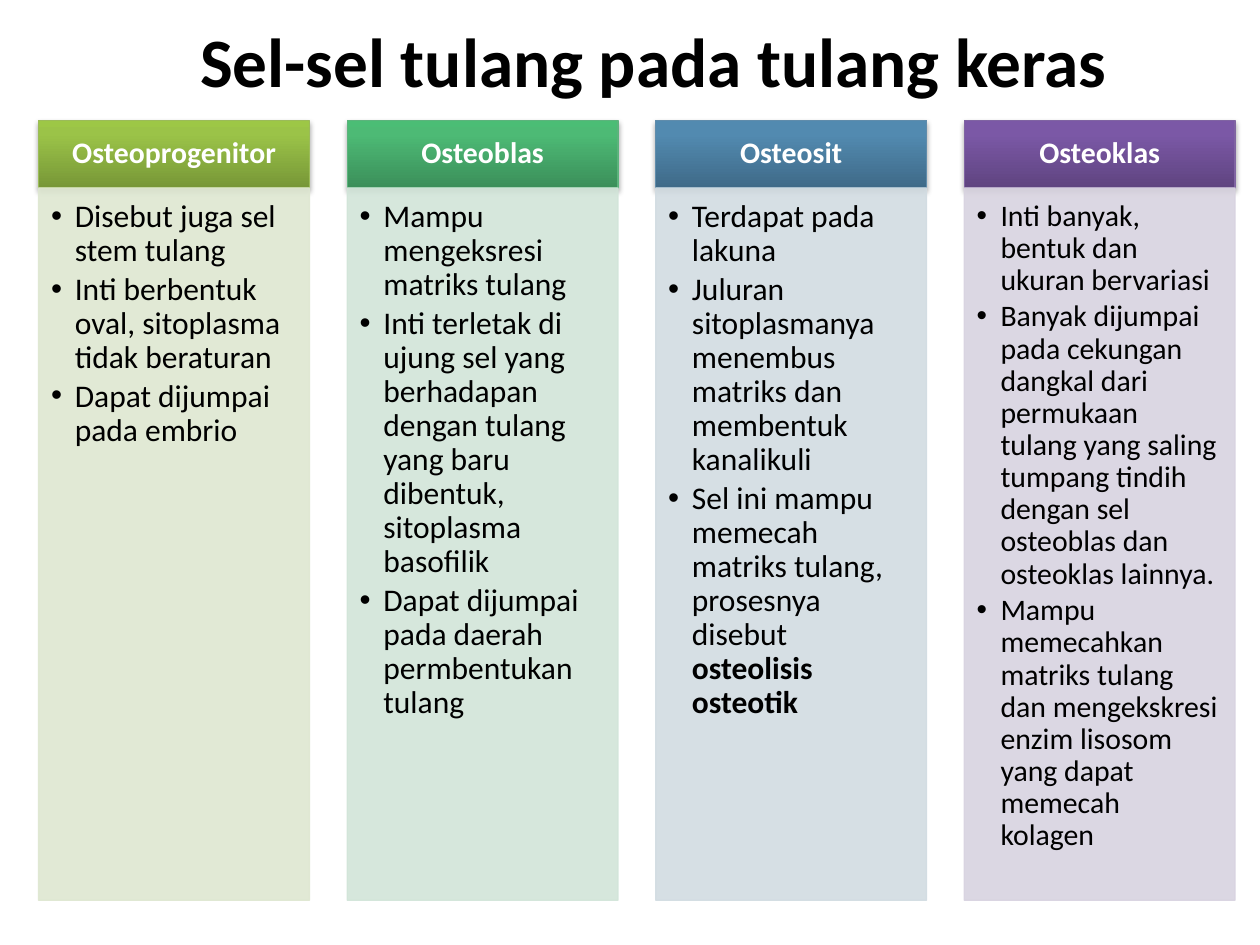
from copy import deepcopy

from lxml.etree import SubElement
from pptx import Presentation
from pptx.dml.color import RGBColor
from pptx.enum.shapes import MSO_SHAPE
from pptx.enum.text import MSO_ANCHOR, PP_ALIGN
from pptx.oxml.ns import qn
from pptx.util import Cm, Pt

COLORS = {
    "text": "000000",
    "header_text": "FFFFFF",
    "shadow": "000000",
    "green": {"stops": ("779737", "9BC348", "9DC746"), "line": "9BBB59", "body": "DEE7D1"},
    "teal": {"stops": ("3B8F5A", "4DBA75", "4BBD75"), "line": "5CB37C", "body": "D2E5D9"},
    "blue": {"stops": ("3F6A88", "528AB0", "518BB3"), "line": "608CAB", "body": "D2DCE2"},
    "purple": {"stops": ("5F4480", "7B58A6", "7C57A8"), "line": "8064A2", "body": "D8D3E0"},
}
STOP_POSITIONS = (0, 0.8, 1)
COLUMN_LEFT, COLUMN_STEP, COLUMN_WIDTH = 0.78, 6.22, 5.46
HEADER_TOP, HEADER_HEIGHT, BODY_HEIGHT = 2.43, 1.36, 14.36

TITLE_FRAME = {"word_wrap": True, "vertical_anchor": MSO_ANCHOR.MIDDLE}
HEADER_FRAME = {
    "word_wrap": True, "vertical_anchor": MSO_ANCHOR.MIDDLE,
    "margin_left": Cm(0.33), "margin_right": Cm(0.33),
    "margin_top": Cm(0.2), "margin_bottom": Cm(0.2),
}
BODY_FRAME = {
    "word_wrap": True, "vertical_anchor": MSO_ANCHOR.TOP,
    "margin_left": Cm(0.25), "margin_right": Cm(0.34),
    "margin_top": Cm(0.25), "margin_bottom": Cm(0.4),
}

COLUMNS = [
    ("Osteoprogenitor", "green", 18, [
        ["Disebut juga sel stem tulang"],
        ["Inti berbentuk oval, sitoplasma tidak beraturan"],
        ["Dapat dijumpai pada embrio"],
    ]),
    ("Osteoblas", "teal", 18, [
        ["Mampu mengeksresi matriks tulang"],
        ["Inti terletak di ujung sel yang berhadapan dengan tulang yang baru dibentuk, "
         "sitoplasma basofilik"],
        ["Dapat dijumpai pada daerah permbentukan tulang"],
    ]),
    ("Osteosit", "blue", 18, [
        ["Terdapat pada lakuna"],
        ["Juluran sitoplasmanya menembus matriks dan membentuk kanalikuli"],
        ["Sel ini mampu memecah matriks tulang, prosesnya disebut ", "osteolisis osteotik"],
    ]),
    ("Osteoklas", "purple", 17, [
        ["Inti banyak, bentuk dan ukuran bervariasi"],
        ["Banyak dijumpai pada cekungan dangkal dari permukaan tulang yang saling tumpang "
         "tindih dengan sel osteoblas dan osteoklas lainnya."],
        ["Mampu memecahkan matriks tulang dan mengekskresi enzim lisosom yang dapat "
         "memecah kolagen"],
    ]),
]


def apply_format(target, values):
    for name, value in values.items():
        setattr(target, name, value)


def add_run(paragraph, text, size, color, bold):
    run = paragraph.add_run()
    run.text = text
    apply_format(run.font, {"name": "Calibri", "size": Pt(size), "bold": bold})
    run.font.color.rgb = RGBColor.from_string(color)


presentation = Presentation()
apply_format(presentation, {"slide_width": Cm(25.4), "slide_height": Cm(19.05)})
slide = presentation.slides.add_slide(presentation.slide_layouts[6])

title = slide.shapes.add_textbox(Cm(2.87), Cm(0), Cm(20.62), Cm(2.41))
apply_format(title.text_frame, TITLE_FRAME)
paragraph = title.text_frame.paragraphs[0]
paragraph.alignment = PP_ALIGN.CENTER
add_run(paragraph, "Sel-sel tulang pada tulang keras", 39.6, COLORS["text"], True)

for index, (heading, palette_name, size, points) in enumerate(COLUMNS):
    palette = COLORS[palette_name]
    left = Cm(COLUMN_LEFT + index * COLUMN_STEP)

    header = slide.shapes.add_shape(
        MSO_SHAPE.RECTANGLE, left, Cm(HEADER_TOP), Cm(COLUMN_WIDTH), Cm(HEADER_HEIGHT))
    header.fill.gradient()
    header.fill.gradient_angle = 90
    stop_list = next(header.element.iter(qn("a:gsLst")))
    stop_list.append(deepcopy(stop_list[0]))
    for stop, position, color in zip(header.fill.gradient_stops, STOP_POSITIONS, palette["stops"]):
        stop.position = position
        stop.color.rgb = RGBColor.from_string(color)
    header.line.width = Pt(0.75)
    header.line.color.rgb = RGBColor.from_string(palette["line"])
    header.shadow.inherit = False
    effects = next(header.element.iter(qn("a:effectLst")))
    shadow = SubElement(effects, qn("a:outerShdw"), blurRad=str(Pt(3.1)), dist=str(Pt(1.8)),
                        dir="5400000", rotWithShape="0")
    shadow_color = SubElement(shadow, qn("a:srgbClr"), val=COLORS["shadow"])
    SubElement(shadow_color, qn("a:alpha"), val="35000")
    apply_format(header.text_frame, HEADER_FRAME)
    paragraph = header.text_frame.paragraphs[0]
    apply_format(paragraph, {"alignment": PP_ALIGN.CENTER, "line_spacing": 0.9})
    add_run(paragraph, heading, 17, COLORS["header_text"], True)

    body = slide.shapes.add_shape(
        MSO_SHAPE.RECTANGLE, left, Cm(HEADER_TOP + HEADER_HEIGHT), Cm(COLUMN_WIDTH), Cm(BODY_HEIGHT))
    body.shadow.inherit = False
    body.fill.solid()
    body.line.width = Pt(0.75)
    for color_format in (body.fill.fore_color, body.line.color):
        color_format.rgb = RGBColor.from_string(palette["body"])
    for color_element in body.element.spPr.iter(qn("a:srgbClr")):
        SubElement(color_element, qn("a:alpha"), val="90000")
    apply_format(body.text_frame, BODY_FRAME)
    for number, runs in enumerate(points):
        paragraph = body.text_frame.add_paragraph() if number else body.text_frame.paragraphs[0]
        apply_format(paragraph, {"alignment": PP_ALIGN.LEFT, "level": 1, "line_spacing": 0.9,
                                 "space_after": Pt(0.15 * size)})
        properties = paragraph._p.get_or_add_pPr()
        properties.set("marL", str(Cm(0.48)))
        properties.set("indent", str(-Cm(0.48)))
        SubElement(properties, qn("a:buFont"), typeface="Arial")
        SubElement(properties, qn("a:buChar"), char="•")
        for run_number, text in enumerate(runs):
            add_run(paragraph, text, size, COLORS["text"], run_number > 0)

presentation.save("out.pptx")
